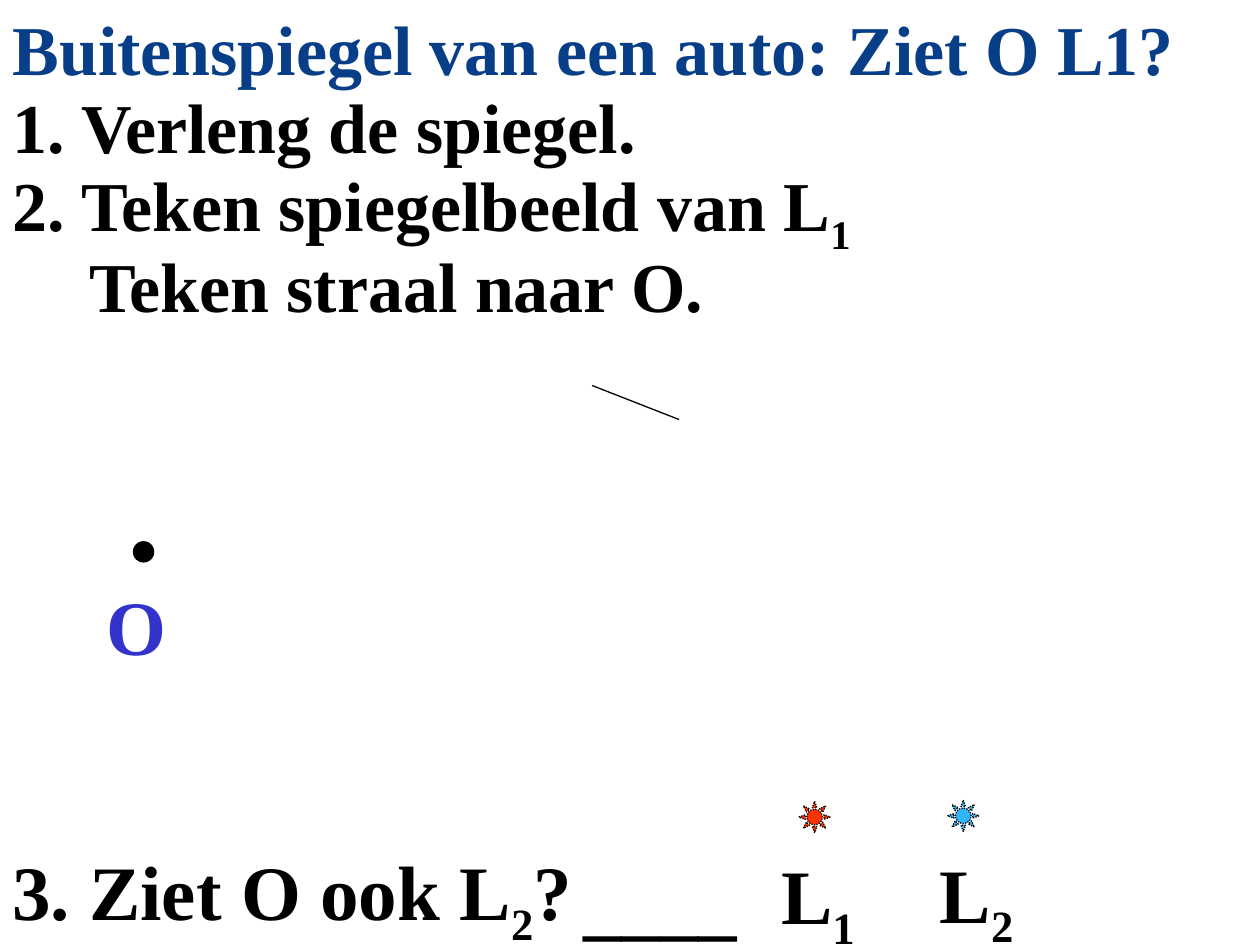
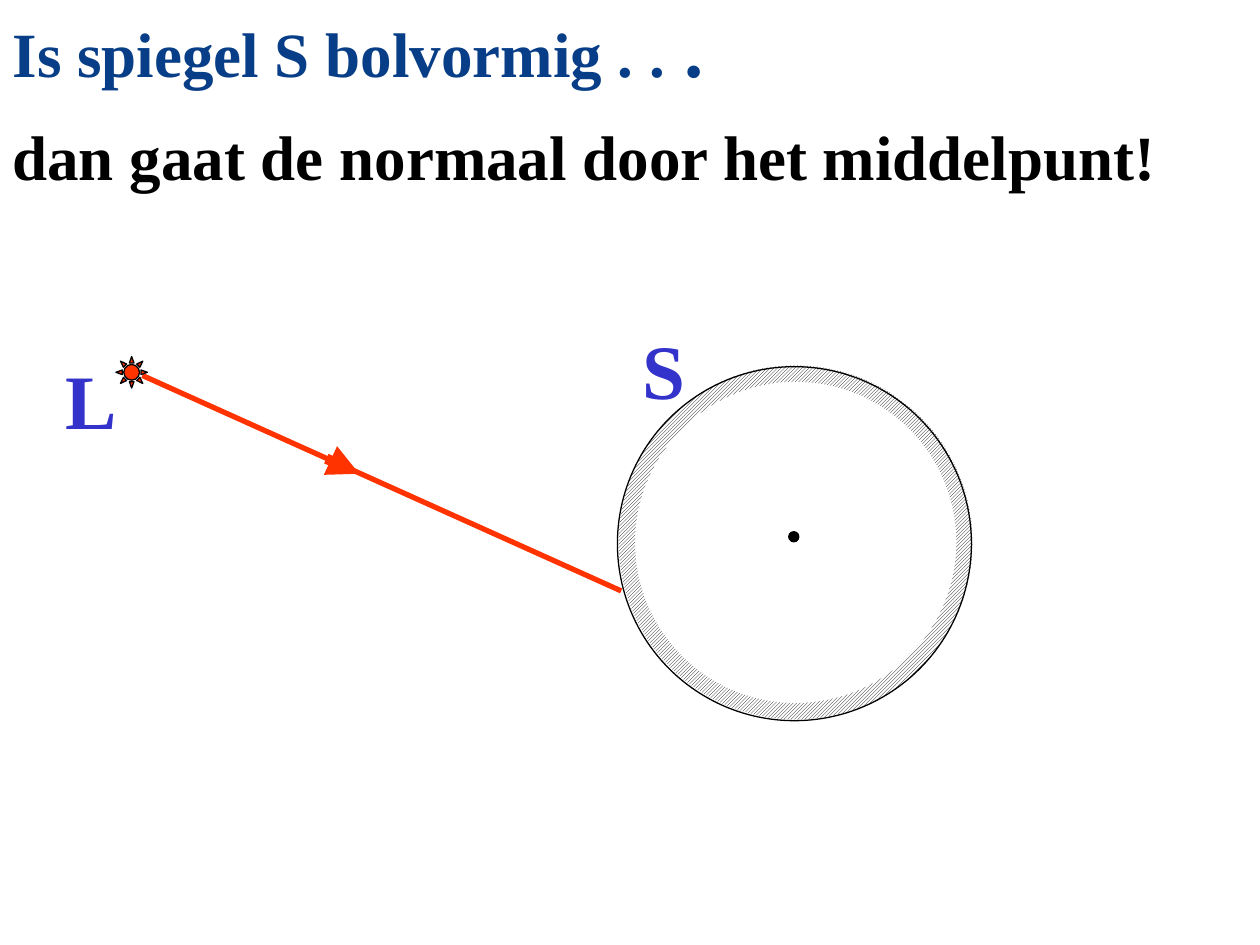
"""Build two slides on plane and round mirrors."""
from dataclasses import dataclass

from lxml import etree
from pptx import Presentation
from pptx.dml.color import RGBColor
from pptx.enum.dml import MSO_LINE, MSO_PATTERN
from pptx.enum.shapes import MSO_CONNECTOR, MSO_SHAPE
from pptx.enum.text import MSO_ANCHOR, MSO_AUTO_SIZE, PP_ALIGN
from pptx.oxml.ns import qn
from pptx.util import Inches, Pt

COLORS = {"title": "073E87", "ink": "000000", "mark": "3333CC",
          "red": "FF3300", "blue": "31B6FD", "paper": "FFFFFF"}
FONT = "Times New Roman"
WIDE, HIGH = Inches(10), Inches(7.5)
COLS, ROWS = 100, 75
STRAIGHT = MSO_CONNECTOR.STRAIGHT
SUN, OVAL, RING = MSO_SHAPE.SUN, MSO_SHAPE.OVAL, MSO_SHAPE.DONUT
DOTS, HATCH = MSO_LINE.ROUND_DOT, MSO_PATTERN.LIGHT_UPWARD_DIAGONAL
TOP, MIDDLE = MSO_ANCHOR.TOP, MSO_ANCHOR.MIDDLE
LEFT, FIXED = PP_ALIGN.LEFT, MSO_AUTO_SIZE.NONE
LAMP = 2.5
BALL = 28.1


@dataclass(frozen=True)
class Box:
    """Place in grid columns and rows."""
    col: float
    row: float
    wide: float
    high: float

    def spots(self) -> tuple[int, int, int, int]:
        """Give left, top, width and height in EMU."""
        return (across(self.col), down(self.row),
                across(self.wide), down(self.high))


@dataclass(frozen=True)
class Label:
    """Text whose every second piece is a subscript."""
    box: Box
    words: tuple[str, ...]
    size: int = 44
    color: str = "ink"
    anchor: MSO_ANCHOR = MIDDLE
    indent: float = 0


@dataclass(frozen=True)
class Ray:
    """Straight line between two grid points."""
    start: tuple[float, float]
    end: tuple[float, float]
    color: str
    weight: float
    arrow: bool = False


def across(cols: float) -> int:
    """Turn columns into EMU."""
    return round(WIDE * cols / COLS)


def down(rows: float) -> int:
    """Turn rows into EMU."""
    return round(HIGH * rows / ROWS)


def tint(name: str) -> RGBColor:
    """Look up a colour."""
    return RGBColor.from_string(COLORS[name])


def style(run, size: int, color: str) -> None:
    """Format one run."""
    run.font.name, run.font.size, run.font.bold = FONT, Pt(size), True
    run.font.color.rgb = tint(color)


def write(shape, label: Label) -> None:
    """Place and fill a text shape."""
    shape.left, shape.top, shape.width, shape.height = label.box.spots()
    frame = shape.text_frame
    frame.text = label.words[0]
    frame.word_wrap = label.anchor == MIDDLE
    frame.auto_size, frame.vertical_anchor = FIXED, label.anchor
    line = frame.paragraphs[0]
    line.alignment = LEFT
    if label.indent:
        props = line._p.get_or_add_pPr()
        props.set("marL", str(across(label.indent)))
        props.set("indent", "0")
    for word in label.words[1:]:
        line.add_run().text = word
    for place, run in enumerate(line.runs):
        style(run, label.size, label.color)
        if place % 2:
            run._r.get_or_add_rPr().set("baseline", "-25000")


def add_label(slide, label: Label) -> None:
    """Add a text box."""
    write(slide.shapes.add_textbox(*label.box.spots()), label)


def add_form(slide, kind: MSO_SHAPE, box: Box, fill: str | None,
             edge: bool = True):
    """Add a preset shape with a thin black edge."""
    form = slide.shapes.add_shape(kind, *box.spots())
    form.shadow.inherit = False
    if fill:
        form.fill.solid()
        form.fill.fore_color.rgb = tint(fill)
    else:
        form.fill.background()
    if edge:
        form.line.color.rgb = tint("ink")
        form.line.width = Pt(0.75)
    else:
        form.line.fill.background()
    return form


def add_lamp(slide, col: float, row: float, fill: str):
    """Add a small sun."""
    return add_form(slide, SUN, Box(col, row, LAMP, LAMP), fill)


def add_ray(slide, ray: Ray) -> None:
    """Add a line, with an arrowhead if asked."""
    line = slide.shapes.add_connector(
        STRAIGHT, across(ray.start[0]), down(ray.start[1]),
        across(ray.end[0]), down(ray.end[1]))
    line.line.color.rgb = tint(ray.color)
    line.line.width = Pt(ray.weight)
    if ray.arrow:
        tip = etree.SubElement(line.line._get_or_add_ln(), qn("a:tailEnd"))
        tip.set("type", "triangle")
    etree.SubElement(line._element.spPr, qn("a:effectLst"))


def add_slide(deck, title: Label):
    """Add a white slide with its title."""
    slide = deck.slides.add_slide(deck.slide_layouts[5])
    slide.background.fill.solid()
    slide.background.fill.fore_color.rgb = tint("paper")
    write(slide.shapes.title, title)
    return slide


def car_slide(deck) -> None:
    """Draw the car mirror task."""
    slide = add_slide(deck, Label(
        Box(0, 0, 100, 7.5), ("Buitenspiegel van een auto: Ziet O L1?",),
        40, "title"))
    for label in (
            Label(Box(0, 7.1, 94.2, 5.8), ("1. Verleng de spiegel.",), 40),
            Label(Box(0, 13.3, 100, 6.7),
                  ("2. Teken spiegelbeeld van L", "1"), 40),
            Label(Box(0, 19.2, 96.7, 6.7), ("Teken straal naar O.",), 40,
                  indent=6.1),
            Label(Box(0, 67.8, 46.9, 6.7), ("3. Ziet O ook L", "2", "?")),
            Label(Box(45.3, 68.1, 15, 6.7), ("____",)),
            Label(Box(7.5, 45.4, 6.8, 8.3), ("O",), color="mark",
                  anchor=TOP)):
        add_label(slide, label)
    add_ray(slide, Ray((47, 30.6), (53.9, 33.3), "ink", 0.75))
    for col, row, fill, left, top, num in (
            (75.2, 63.5, "blue", 73.6, 66.7, "2"),
            (63.4, 63.6, "red", 61, 66.8, "1")):
        add_lamp(slide, col, row, fill).line.dash_style = DOTS
        add_label(slide, Label(Box(left, top, 8.1, 8.3), ("L", num),
                               anchor=TOP))
    add_form(slide, OVAL, Box(10.6, 43, 1.6, 1.6), "ink")


def ball_slide(deck) -> None:
    """Draw the round mirror with its ray."""
    slide = add_slide(deck, Label(
        Box(0, 0.8, 100, 5.8), ("Is spiegel S bolvormig . .",),
        36, "title"))
    last = slide.shapes.title.text_frame.paragraphs[0].add_run()
    last.text = " ."
    style(last, 44, "title")
    add_label(slide, Label(
        Box(0, 7.6, 100, 9.4),
        ("dan gaat de normaal door het middelpunt!",), 36))
    add_ray(slide, Ray((11.3, 29.8), (49.3, 46.9), "red", 3))
    add_ray(slide, Ray((25.9, 36.4), (28.5, 37.6), "red", 6, True))
    add_lamp(slide, 9.2, 28.3, "red")
    for text, box in (("L", Box(4.2, 27.5, 6.1, 8.3)),
                      ("S", Box(50, 25.1, 7.5, 8.3))):
        add_label(slide, Label(box, (text,), color="mark", anchor=TOP))
    ring = add_form(slide, RING, Box(49.1, 29, BALL, BALL), None, False)
    ring.adjustments[0] = 1.3 / BALL
    ring.fill.patterned()
    ring.fill.pattern = HATCH
    ring.fill.fore_color.rgb = tint("ink")
    ring.fill.back_color.rgb = tint("paper")
    add_form(slide, OVAL, Box(49, 29.1, BALL, BALL), None)
    add_form(slide, OVAL, Box(62.6, 42.2, 0.8, 0.8), "ink")


def main() -> None:
    """Build and save the deck."""
    deck = Presentation()
    deck.slide_width, deck.slide_height = WIDE, HIGH
    car_slide(deck)
    ball_slide(deck)
    deck.save("out.pptx")


if __name__ == "__main__":
    main()
